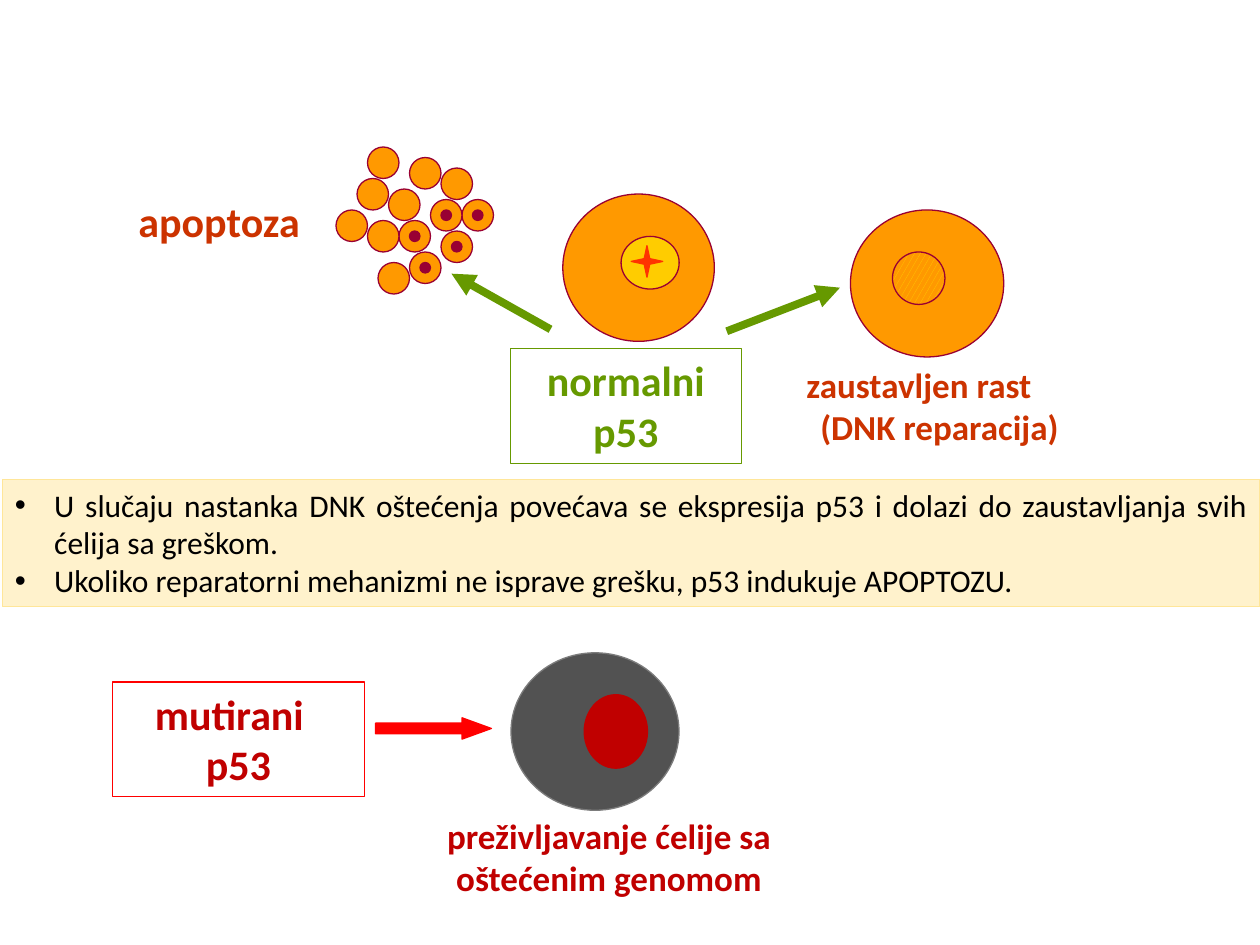
import pptx
import pptx.dml.color
import pptx.enum.dml
import pptx.enum.shapes
import pptx.enum.text
import pptx.oxml.ns
import pptx.util
from lxml import etree

Pt = pptx.util.Pt
RGBColor = pptx.dml.color.RGBColor
SHAPE = pptx.enum.shapes.MSO_SHAPE
ALIGN = pptx.enum.text.PP_ALIGN
qn = pptx.oxml.ns.qn

ORANGE = RGBColor(0xFF, 0x99, 0x00)
YELLOW = RGBColor(0xFF, 0xCC, 0x00)
MAROON = RGBColor(0x99, 0x00, 0x33)
RUST = RGBColor(0xCC, 0x33, 0x00)
GREEN = RGBColor(0x66, 0x99, 0x00)
RED = RGBColor(0xFF, 0x00, 0x00)
DARK_RED = RGBColor(0xC0, 0x00, 0x00)
STAR_RED = RGBColor(0xFF, 0x33, 0x00)
DARK_GRAY = RGBColor(0x52, 0x52, 0x52)
GRAY = RGBColor(0x7C, 0x7C, 0x7C)
CREAM = RGBColor(0xFF, 0xF2, 0xCC)
CREAM_EDGE = RGBColor(0xFF, 0xE6, 0x99)
BLACK = RGBColor(0x00, 0x00, 0x00)

# Content: texts
EXPLANATION = [
    "U slučaju nastanka DNK oštećenja povećava se ekspresija p53 i dolazi "
    "do zaustavljanja svih ćelija sa greškom.",
    "Ukoliko reparatorni mehanizmi ne isprave grešku, p53 indukuje APOPTOZU.",
]
LABELS = [
    # (left, top, width, height), paragraphs, format
    ((444, 204, 186, 55.5), ["zaustavljen rast", "(DNK reparacija)"],
     dict(size=20, color=RUST, indents=[9.7, 17.7])),
    ((72, 108, 120, 36), ["apoptoza"], dict(size=24, color=RUST)),
    ((231, 462, 234, 55.5), ["preživljavanje ćelije sa oštećenim genomom"],
     dict(size=20, color=DARK_RED, align=ALIGN.CENTER)),
]
FRAMES = [
    # box, edge, paragraphs, format
    ((291.6, 199.2, 132, 65.5), GREEN, ["normalni p53"],
     dict(size=24, color=GREEN, align=ALIGN.CENTER)),
    ((64.2, 389.7, 144, 65.5), RED, ["mutirani", "p53"],
     dict(size=24, color=DARK_RED, indents=[17.3, 46.4])),
]

# Content: cells
CELLS = [
    # kind, box, fill, edge
    (SHAPE.OVAL, (321.6, 110.9, 86.6, 84.2), ORANGE, MAROON),
    (SHAPE.OVAL, (354.9, 135.1, 33.2, 30.1), YELLOW, MAROON),
    (SHAPE.OVAL, (486, 120, 87.6, 84), ORANGE, MAROON),
    (SHAPE.OVAL, (292, 373, 96, 90), DARK_GRAY, GRAY),
    (SHAPE.OVAL, (333.8, 397, 36.2, 42), DARK_RED, DARK_RED),
]
REPAIRED_NUCLEUS = (510, 144, 30, 30)
DAMAGE_STAR = (360.7, 140.4, 18, 18)

# Apoptotic fragments: column, row on the grid, has a nucleus
GRID = 6
FRAGMENTS = [
    (38, 21, True), (37, 18, False), (39, 15, False), (42, 22, True),
    (42, 16, False), (32, 20, False), (44, 19, True), (41, 19, True),
    (34, 17, False), (35, 14, False), (39, 24, True), (36, 25, False),
    (35, 21, False),
]
GREEN_ARROWS = [((415.3, 189.3), (480, 164.4)), ((314.6, 188.2), (258, 156.4))]

prs = pptx.Presentation()
prs.slide_width, prs.slide_height = Pt(720), Pt(540)
slide = prs.slides.add_slide(prs.slide_layouts[6])


def add_shape(kind, box, fill=None, edge=None):
    shape = slide.shapes.add_shape(kind, *map(Pt, box))
    shape.shadow.inherit = False
    if fill is None:
        shape.fill.background()
    else:
        shape.fill.solid()
        shape.fill.fore_color.rgb = fill
    shape.line.color.rgb = edge
    shape.line.width = Pt(0.75)
    return shape


def write(shape, paragraphs, *, size, color, bold=True, align=ALIGN.LEFT,
          indents=None, bullet=None):
    frame = shape.text_frame
    frame.word_wrap = True
    frame.vertical_anchor = pptx.enum.text.MSO_ANCHOR.TOP
    for number, text in enumerate(paragraphs):
        paragraph = frame.add_paragraph() if number else frame.paragraphs[0]
        paragraph.alignment = align
        run = paragraph.add_run()
        run.text = text
        run.font.name = "Calibri"
        run.font.size = Pt(size)
        run.font.bold = bold
        run.font.color.rgb = color
        properties = paragraph._p.get_or_add_pPr()
        if indents:
            properties.set("marL", str(Pt(indents[number])))
        if bullet:
            properties.set("indent", str(-Pt(indents[number])))
            etree.SubElement(properties, qn("a:buFont"), typeface="Arial")
            etree.SubElement(properties, qn("a:buChar"), char=bullet)


def add_arrow(start, end, color, width):
    arrow = slide.shapes.add_connector(
        pptx.enum.shapes.MSO_CONNECTOR.STRAIGHT, *map(Pt, start + end))
    arrow.line.color.rgb = color
    arrow.line.width = Pt(width)
    etree.SubElement(arrow.line._get_or_add_ln(), qn("a:tailEnd"), type="triangle")
    etree.SubElement(arrow._element.spPr, qn("a:effectLst"))


# Cells and their nuclei
for cell in CELLS:
    add_shape(*cell)
nucleus = add_shape(SHAPE.OVAL, REPAIRED_NUCLEUS, ORANGE, MAROON)
nucleus.fill.patterned()
nucleus.fill.pattern = pptx.enum.dml.MSO_PATTERN.LARGE_CONFETTI
nucleus.fill.fore_color.rgb = YELLOW
nucleus.fill.back_color.rgb = ORANGE
star = add_shape(SHAPE.STAR_4_POINT, DAMAGE_STAR, STAR_RED, STAR_RED)
star.adjustments[0] = 0.125

# Apoptotic fragments, then the nuclei on top
for column, row, _ in FRAGMENTS:
    add_shape(SHAPE.OVAL, (column * GRID, row * GRID, 3 * GRID, 3 * GRID),
              ORANGE, MAROON)
for column, row, has_nucleus in FRAGMENTS:
    if has_nucleus:
        add_shape(SHAPE.OVAL, ((column + 1) * GRID, (row + 1) * GRID, GRID, GRID),
                  MAROON, MAROON)

# Labels and framed gene names
for box, paragraphs, style in LABELS:
    write(slide.shapes.add_textbox(*map(Pt, box)), paragraphs, **style)
for box, edge, paragraphs, style in FRAMES:
    write(add_shape(SHAPE.RECTANGLE, box, edge=edge), paragraphs, **style)

# Arrows from each gene to its outcome
for start, end in GREEN_ARROWS:
    add_arrow(start, end, GREEN, 4.5)
mutation_arrow = add_shape(SHAPE.RIGHT_ARROW, (214.6, 410.2, 66.2, 12.2), RED, RED)
mutation_arrow.adjustments[0] = 0.5
mutation_arrow.adjustments[1] = 1.375

# Explanation band
band = add_shape(SHAPE.RECTANGLE, (1.4, 274, 718.6, 72.7), CREAM, CREAM_EDGE)
write(band, EXPLANATION, size=18, color=BLACK, bold=False, align=ALIGN.JUSTIFY,
      indents=[22.5] * len(EXPLANATION), bullet="•")

prs.save("out.pptx")
